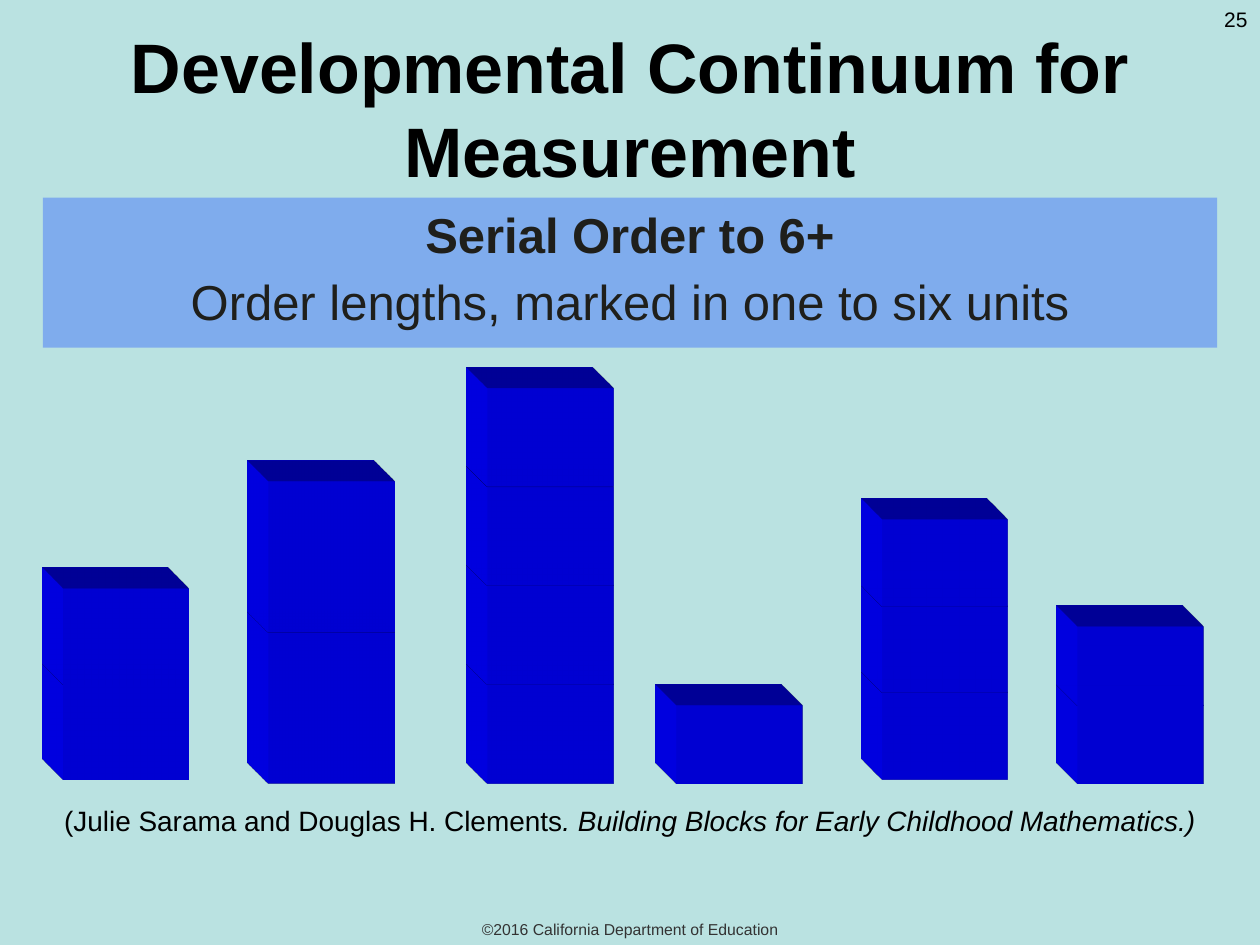
from pptx import Presentation
from pptx.dml.color import RGBColor
from pptx.enum.shapes import MSO_SHAPE
from pptx.enum.text import MSO_ANCHOR, MSO_AUTO_SIZE, PP_ALIGN
from pptx.oxml.ns import qn
from pptx.util import Pt
from lxml.etree import SubElement

THEME = {
    "font": "Arial",
    "back": "BAE2E1", "band": "3366FF", "block": "0000FF",
    "black": "000000", "ink": "1F1F1B", "grey": "333333",
    "title": 40, "body": 28, "cite": 16, "page": 12, "foot": 9,
}
TITLE = "Developmental Continuum for Measurement"
BODY = [("Serial Order to 6+", True),
        ("Order lengths, marked in one to six units", False)]
CITE = [("(Julie Sarama and Douglas H. Clements", False),
        (". Building Blocks for Early Childhood Mathematics.)", True)]
PAGE = "25"
FOOT = "©2016 California Department of Education"

# Towers: left and base of the front face, block count, block height
TOWERS = [
    (36, 445.5, 2, 54.5),
    (153.4, 447.8, 2, 86.4),
    (278.6, 447.8, 4, 56.5),
    (386.6, 447.8, 1, 44.8),
    (504, 445.5, 3, 49.5),
    (615.6, 447.8, 2, 44.8),
]
WIDE, DEPTH = 72, 33.9


def color(key):
    return RGBColor.from_string(THEME[key])


def style(run, size, ink, bold=False, italic=False):
    font = run.font
    font.name, font.size = THEME["font"], Pt(THEME[size])
    font.color.rgb = color(ink)
    font.bold, font.italic = bold, italic


def place(shape, box):
    shape.left, shape.top, shape.width, shape.height = map(Pt, box)


def setup(frame, anchor, top=3.6):
    frame.word_wrap = True
    frame.auto_size = MSO_AUTO_SIZE.NONE
    frame.vertical_anchor = anchor
    frame.margin_top = Pt(top)


def label(slide, box, runs, size, ink, align, anchor=MSO_ANCHOR.TOP, top=3.6):
    """Add a one-paragraph text box; runs are (text, italic) pairs."""
    frame = slide.shapes.add_textbox(*map(Pt, box)).text_frame
    setup(frame, anchor, top)
    para = frame.paragraphs[0]
    para.alignment = align
    for text, italic in runs:
        run = para.add_run()
        run.text = text
        style(run, size, ink, italic=italic)


def extrude(shape):
    """Give a flat shape depth towards the upper left."""
    props = shape.element.spPr
    scene = SubElement(props, qn("a:scene3d"))
    SubElement(scene, qn("a:camera"), prst="legacyObliqueTopLeft")
    SubElement(scene, qn("a:lightRig"), rig="legacyFlat3", dir="b")
    solid = SubElement(props, qn("a:sp3d"), extrusionH=str(Pt(DEPTH)),
                       prstMaterial="legacyMatte")
    for side in ("a:bevelT", "a:bevelB"):
        SubElement(solid, qn(side), w="13500", h="13500", prst="angle")
    tint = SubElement(solid, qn("a:extrusionClr"))
    SubElement(tint, qn("a:srgbClr"), val=THEME["block"])


def tower(slide, left, base, count, high):
    """Stack blocks from the base up."""
    for i in range(count):
        top = base - (i + 1) * high
        block = slide.shapes.add_shape(MSO_SHAPE.RECTANGLE, Pt(left), Pt(top),
                                       Pt(WIDE), Pt(high))
        block.shadow.inherit = False
        block.fill.solid()
        block.fill.fore_color.rgb = color("block")
        block.line.fill.background()
        extrude(block)


def heading(slide):
    shape = slide.shapes.title
    place(shape, (24.5, 16.5, 671, 90))
    frame = shape.text_frame
    frame.text = TITLE
    setup(frame, MSO_ANCHOR.MIDDLE)
    para = frame.paragraphs[0]
    para.alignment = PP_ALIGN.CENTER
    para.line_spacing = Pt(48)
    style(para.runs[0], "title", "black", bold=True)


def band(slide):
    shape = slide.placeholders[1]
    place(shape, (24.5, 113, 671, 85.7))
    shape.fill.solid()
    shape.fill.fore_color.rgb = color("band")
    tint = next(shape.element.iter(qn("a:srgbClr")))
    SubElement(tint, qn("a:alpha"), val="43000")
    frame = shape.text_frame
    frame.text = "\n".join(text for text, _ in BODY)
    setup(frame, MSO_ANCHOR.TOP, 4)
    for i, (para, (_, bold)) in enumerate(zip(frame.paragraphs, BODY)):
        props = para._p.get_or_add_pPr()
        props.set("marL", "0")
        props.set("indent", "0")
        SubElement(props, qn("a:buNone"))
        para.alignment = PP_ALIGN.CENTER
        para.space_before = Pt(4.5 if i else 0)
        style(para.runs[0], "body", "ink", bold=bold)


def main():
    deck = Presentation()
    deck.slide_width, deck.slide_height = Pt(720), Pt(540)
    slide = deck.slides.add_slide(deck.slide_layouts[1])
    slide.background.fill.solid()
    slide.background.fill.fore_color.rgb = color("back")

    label(slide, (666, 0, 54, 21.6), [(PAGE, False)], "page", "black",
          PP_ALIGN.RIGHT)
    label(slide, (0, 522, 720, 18), [(FOOT, False)], "foot", "grey",
          PP_ALIGN.CENTER, MSO_ANCHOR.MIDDLE)
    heading(slide)
    band(slide)
    for spec in TOWERS:
        tower(slide, *spec)
    label(slide, (0, 455, 720, 45), CITE, "cite", "black",
          PP_ALIGN.CENTER, top=4.2)
    deck.save("out.pptx")


if __name__ == "__main__":
    main()
